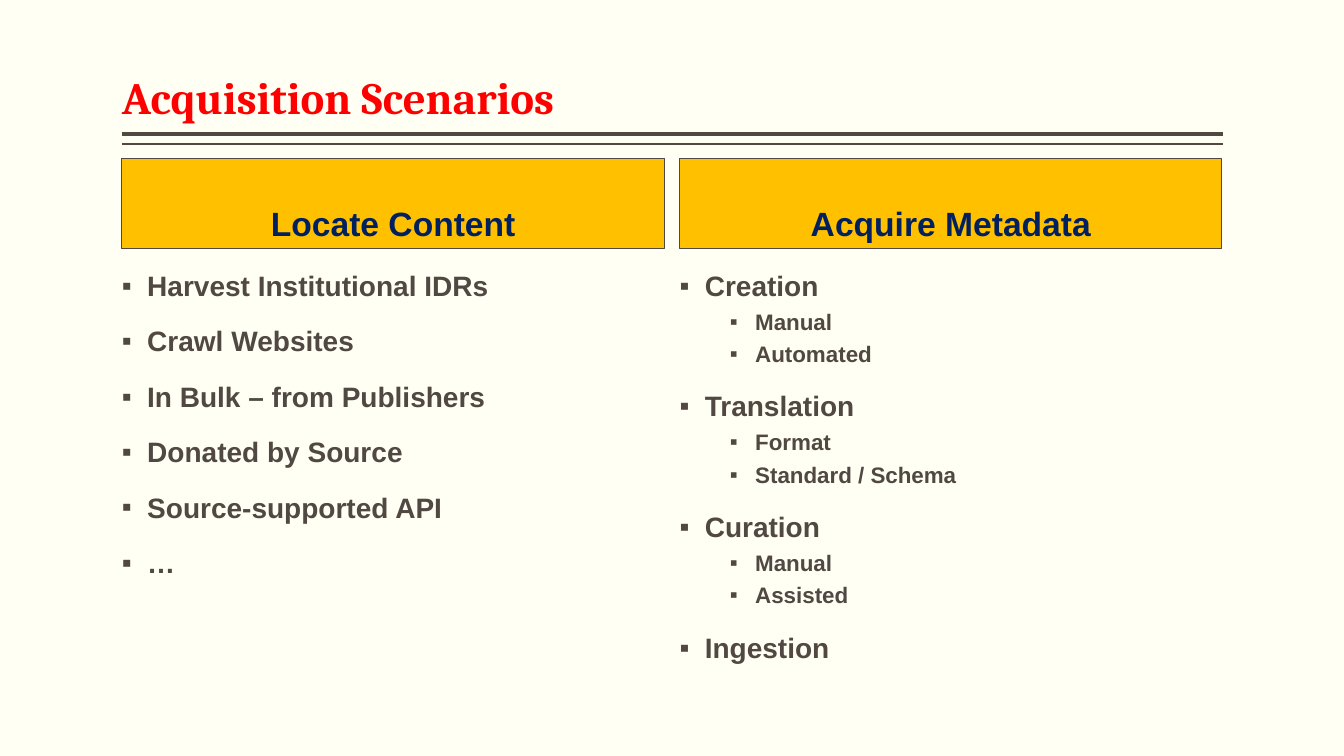
from lxml import etree
from pptx import Presentation
from pptx import util as u
from pptx.dml.color import RGBColor
from pptx.enum import shapes, text
from pptx.oxml import ns

CREAM = RGBColor(0xFF, 0xFF, 0xF3)
BROWN = RGBColor(0x51, 0x48, 0x43)
GOLD = RGBColor(0xFF, 0xC0, 0x00)
NAVY = RGBColor(0x00, 0x20, 0x60)
RED = RGBColor(0xFF, 0x00, 0x00)

LEFT, WIDTH = 1.21, 10.92
COLUMN_WIDTH, COLUMN_STEP = 5.38, 5.53
COMPARISON_LAYOUT = 4

# Per list level: text size and space before, in points, and left margin in inches
LEVELS = [(20, 18, 0.25), (16, 6, 0.75)]
HANGING = 0.25

COLUMNS = [
    ("Locate Content", [
        (0, "Harvest Institutional IDRs"),
        (0, "Crawl Websites"),
        (0, "In Bulk – from Publishers"),
        (0, "Donated by Source"),
        (0, "Source-supported API"),
        (0, "…"),
    ]),
    ("Acquire Metadata", [
        (0, "Creation"), (1, "Manual"), (1, "Automated"),
        (0, "Translation"), (1, "Format"), (1, "Standard / Schema"),
        (0, "Curation"), (1, "Manual"), (1, "Assisted"),
        (0, "Ingestion"),
    ]),
]


def set_all(target, values):
    for name, value in values.items():
        setattr(target, name, value)


class ComparisonSlide:
    def __init__(self, prs):
        self.s = prs.slides.add_slide(prs.slide_layouts[COMPARISON_LAYOUT])
        self.s.background.fill.solid()
        self.s.background.fill.fore_color.rgb = CREAM

    def place(self, idx, x, y, w, h, anchor):
        """Move a placeholder and return it with its text frame set up."""
        sp = self.s.placeholders[idx]
        set_all(sp, {"left": u.Inches(x), "top": u.Inches(y),
                     "width": u.Inches(w), "height": u.Inches(h)})
        set_all(sp.text_frame, {
            "margin_left": 0, "margin_right": 0,
            "margin_top": u.Inches(0.05), "margin_bottom": u.Inches(0.05),
            "vertical_anchor": anchor, "word_wrap": True,
            "auto_size": text.MSO_AUTO_SIZE.NONE,
        })
        return sp

    def add_words(self, p, words, size, color, font="Arial", align=text.PP_ALIGN.LEFT, before=0):
        set_all(p, {"alignment": align, "line_spacing": 0.9,
                    "space_before": u.Pt(before), "space_after": u.Pt(0)})
        r = p.add_run()
        r.text = words
        set_all(r.font, {"name": font, "size": u.Pt(size), "bold": True})
        r.font.color.rgb = color

    def title(self, words):
        sp = self.place(0, LEFT, 0.08, WIDTH, 1.2, text.MSO_ANCHOR.BOTTOM)
        self.add_words(sp.text_frame.paragraphs[0], words, 32, RED, "Cambria")

    def rule(self, y, weight):
        line = self.s.shapes.add_connector(
            shapes.MSO_CONNECTOR.STRAIGHT, u.Inches(LEFT), u.Inches(y),
            u.Inches(LEFT + WIDTH), u.Inches(y))
        line.line.color.rgb = BROWN
        line.line.width = u.Pt(weight)
        etree.SubElement(line._element.spPr, ns.qn("a:effectLst"))

    def heading(self, idx, x, words):
        sp = self.place(idx, x, 1.57, COLUMN_WIDTH, 0.9, text.MSO_ANCHOR.BOTTOM)
        sp.fill.solid()
        sp.fill.fore_color.rgb = GOLD
        sp.line.color.rgb = BROWN
        sp.line.width = u.Pt(0.75)
        self.add_words(sp.text_frame.paragraphs[0], words, 24, NAVY, align=text.PP_ALIGN.CENTER)

    def bullets(self, idx, x, items):
        tf = self.place(idx, x, 2.65, COLUMN_WIDTH, 4.1, text.MSO_ANCHOR.TOP).text_frame
        for i, (level, words) in enumerate(items):
            p = tf.add_paragraph() if i else tf.paragraphs[0]
            size, before, margin = LEVELS[level]
            p.level = level
            pPr = p._p.get_or_add_pPr()
            pPr.set("marL", str(u.Inches(margin)))
            pPr.set("indent", str(-u.Inches(HANGING)))
            etree.SubElement(pPr, ns.qn("a:buFont"), typeface="Arial")
            etree.SubElement(pPr, ns.qn("a:buChar"), char="▪")
            self.add_words(p, words, size, BROWN, before=before if i else 0)


def main():
    prs = Presentation()
    prs.slide_width, prs.slide_height = u.Inches(13.33), u.Inches(7.5)
    slide = ComparisonSlide(prs)
    slide.title("Acquisition Scenarios")
    slide.rule(1.33, 3)
    slide.rule(1.43, 1)
    for i, (heading, items) in enumerate(COLUMNS):
        x = LEFT + i * COLUMN_STEP
        slide.heading(2 * i + 1, x, heading)
        slide.bullets(2 * i + 2, x, items)
    prs.save("out.pptx")


if __name__ == "__main__":
    main()
